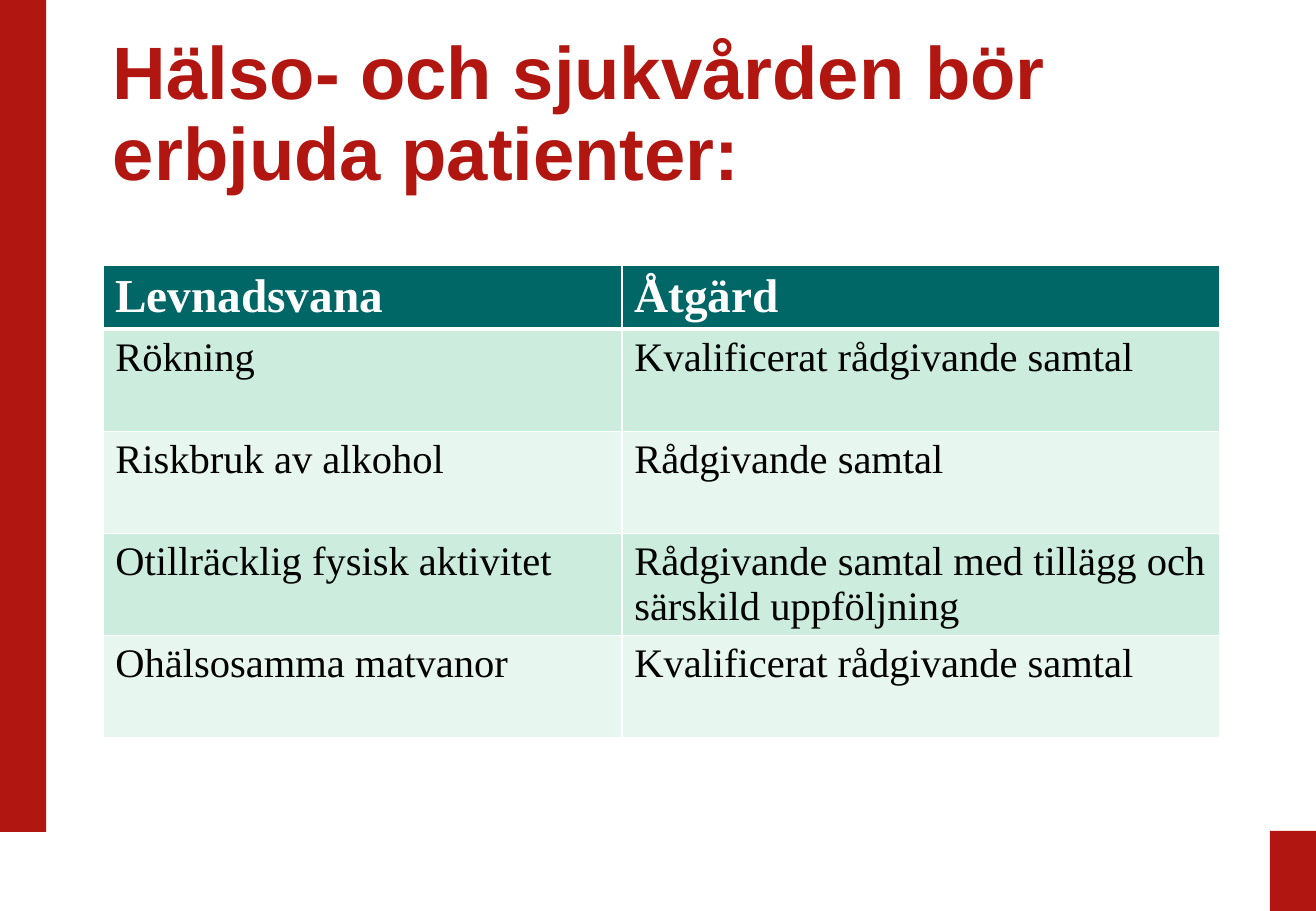
from lxml.etree import SubElement
from pptx import Presentation
from pptx.dml.color import RGBColor
from pptx.enum.shapes import MSO_SHAPE as Preset
from pptx.enum.text import MSO_ANCHOR as Anchor, PP_ALIGN as Align
from pptx.oxml.ns import qn
from pptx.util import Inches, Pt

RED, TEAL, WHITE, BLACK = "B21611", "006666", "FFFFFF", "000000"
BANDS = ["CCECDE", "E7F6EF"]
COLUMN_WIDTHS = [4.27, 4.92]
HEADER_HEIGHT, HABIT_HEIGHT = 0.52, 0.84
HABITS = [
    ("Levnadsvana", "Åtgärd"),
    ("Rökning", "Kvalificerat rådgivande samtal"),
    ("Riskbruk av alkohol", "Rådgivande samtal"),
    ("Otillräcklig fysisk aktivitet",
     "Rådgivande samtal med tillägg och särskild uppföljning"),
    ("Ohälsosamma matvanor", "Kvalificerat rådgivande samtal"),
]


def paint(fill, color):
    fill.solid()
    fill.fore_color.rgb = RGBColor.from_string(color)


def set_font(paragraph, name, size, color, bold):
    font = paragraph.font
    font.name, font.size, font.bold = name, Pt(size), bold
    font.color.rgb = RGBColor.from_string(color)


def add_red_block(slide, left, top, width, height):
    block = slide.shapes.add_shape(
        Preset.RECTANGLE, *map(Inches, (left, top, width, height)))
    block.shadow.inherit = False
    paint(block.fill, RED)
    block.line.fill.background()


def fill_title(slide, left, top, width, height):
    title = slide.shapes.title
    title.left, title.top, title.width, title.height = map(
        Inches, (left, top, width, height))
    frame = title.text_frame
    frame.text = "Hälso- och sjukvården bör erbjuda patienter:"
    frame.word_wrap = True
    frame.vertical_anchor = Anchor.MIDDLE
    heading = frame.paragraphs[0]
    heading.alignment = Align.LEFT
    heading.line_spacing = 0.9
    set_font(heading, "Arial", 44, RED, True)


def set_borders(cell, top, bottom):
    properties = cell._tc.get_or_add_tcPr()
    for side, width in (("L", 1), ("R", 1), ("T", top), ("B", bottom)):
        border = SubElement(properties, qn(f"a:ln{side}"), w=str(Pt(width)))
        color = SubElement(border, qn("a:solidFill"))
        SubElement(color, qn("a:srgbClr"), val=WHITE)


def add_habits_table(slide, left, top):
    heights = [HEADER_HEIGHT] + [HABIT_HEIGHT] * (len(HABITS) - 1)
    table = slide.shapes.add_table(
        len(HABITS), len(COLUMN_WIDTHS),
        *map(Inches, (left, top, sum(COLUMN_WIDTHS), sum(heights)))).table
    for column, width in zip(table.columns, COLUMN_WIDTHS):
        column.width = Inches(width)
    for index, (habit, height) in enumerate(zip(HABITS, heights)):
        table.rows[index].height = Inches(height)
        header = index == 0
        for position, text in enumerate(habit):
            cell = table.cell(index, position)
            cell.text = text
            set_font(cell.text_frame.paragraphs[0], "Times New Roman",
                     28 if header else 24, WHITE if header else BLACK, header)
            set_borders(cell, 3 if index == 1 else 1, 3 if header else 1)
            paint(cell.fill, TEAL if header else BANDS[(index - 1) % 2])


def main():
    deck = Presentation()
    deck.slide_width, deck.slide_height = Inches(10.83), Inches(7.5)
    slide = deck.slides.add_slide(deck.slide_layouts[5])
    paint(slide.background.fill, WHITE)
    add_red_block(slide, 0, 0, 0.38, 6.85)
    add_red_block(slide, 10.45, 6.84, 0.38, 0.66)
    fill_title(slide, 0.83, 0.33, 9.21, 1.25)
    add_habits_table(slide, 0.85, 2.18)
    deck.save("out.pptx")


if __name__ == "__main__":
    main()
